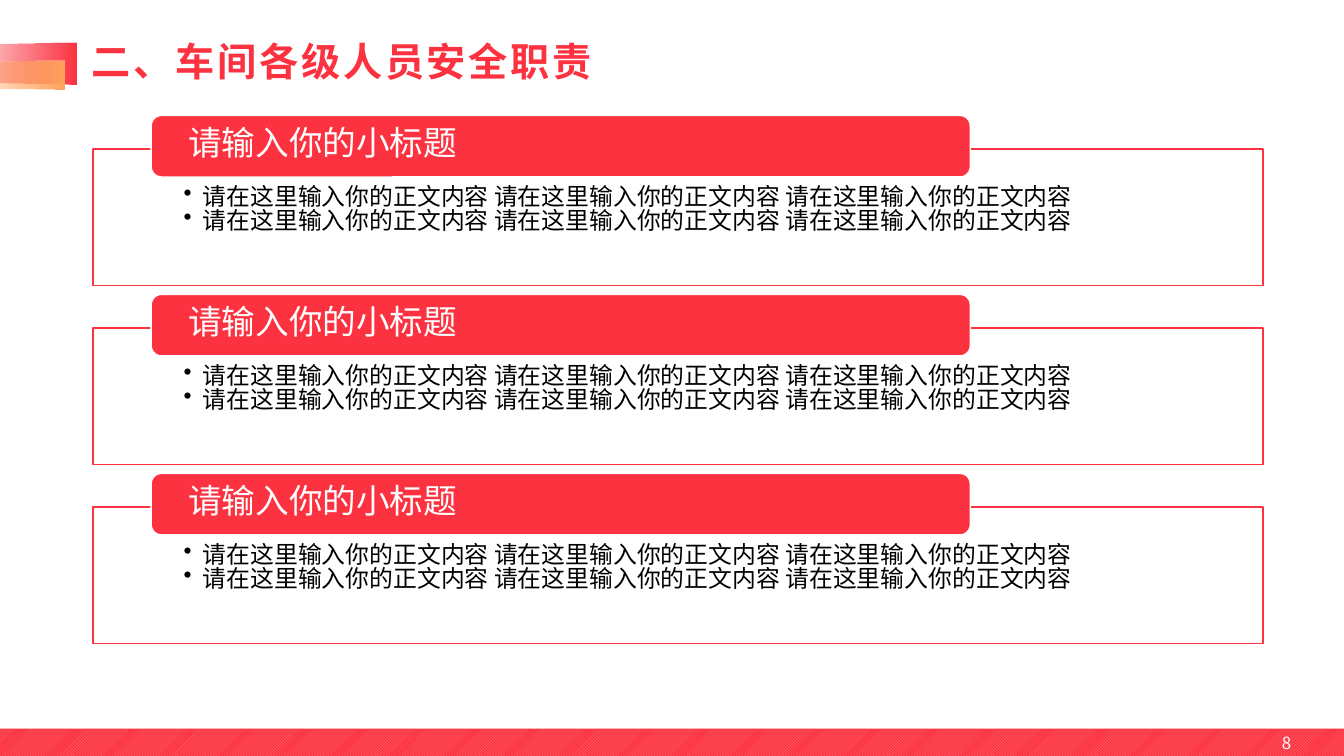
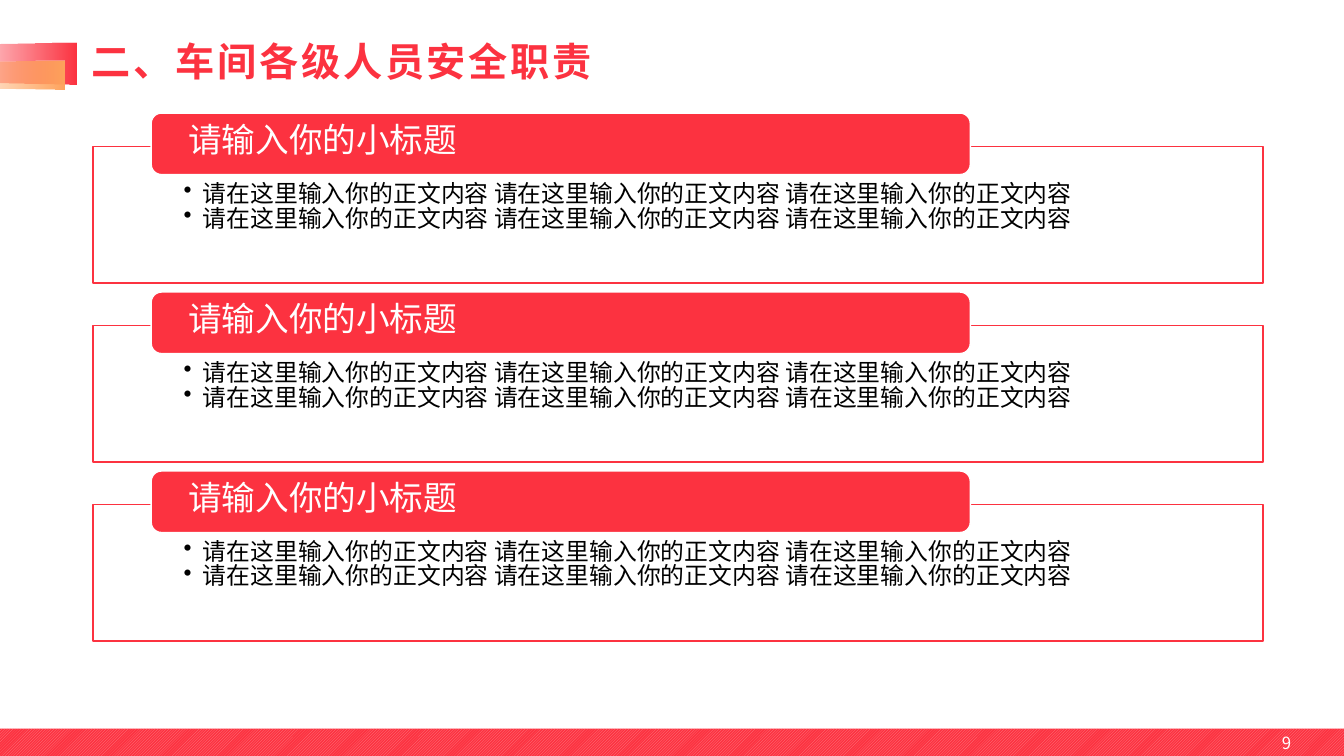
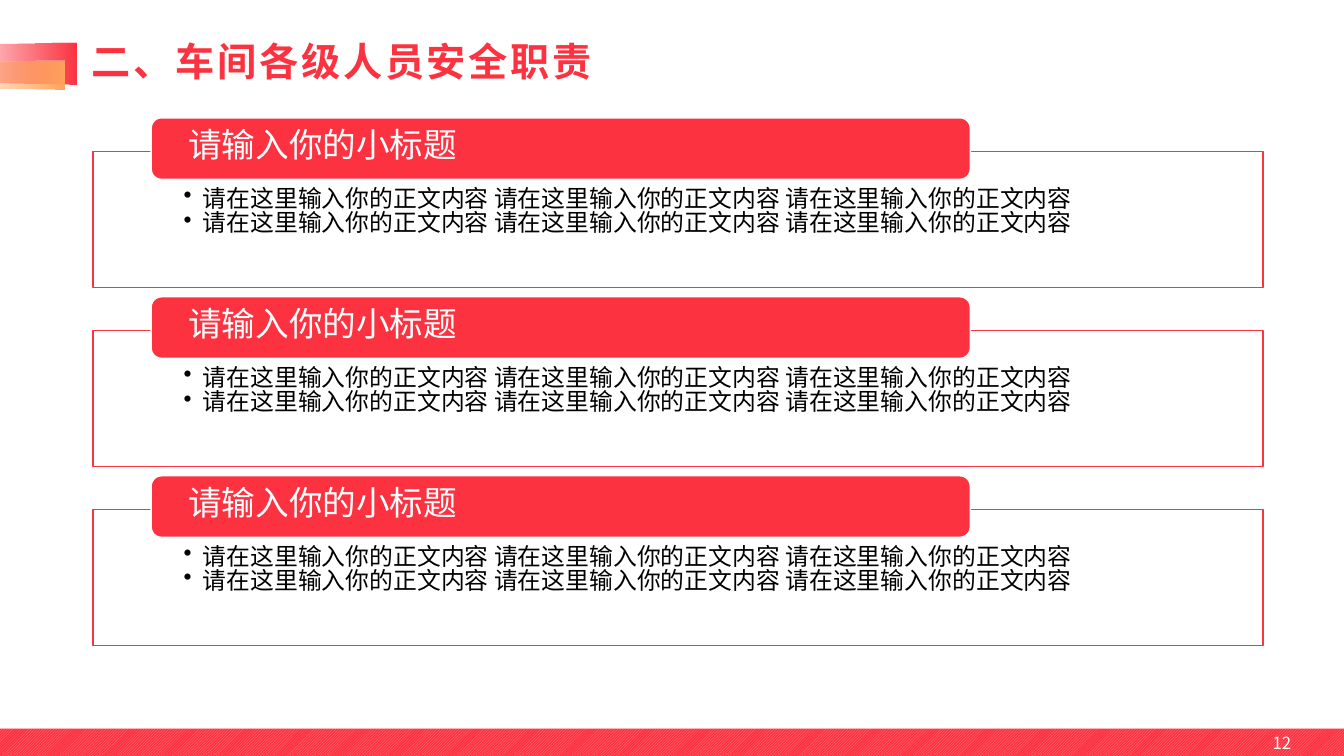
from dataclasses import dataclass

from lxml.etree import SubElement
from pptx import Presentation
from pptx.dml.color import RGBColor
from pptx.enum.dml import MSO_PATTERN
from pptx.enum.shapes import MSO_SHAPE
from pptx.enum.text import MSO_ANCHOR, PP_ALIGN
from pptx.oxml.ns import qn
from pptx.util import Cm, Pt


@dataclass(frozen=True)
class Theme:
    font: str = "Noto Sans CJK JP"
    red: RGBColor = RGBColor(0xFC, 0x32, 0x40)
    pink: RGBColor = RGBColor(0xFD, 0x84, 0x8C)
    orange: RGBColor = RGBColor(0xFF, 0xA4, 0x5D)
    white: RGBColor = RGBColor(0xFF, 0xFF, 0xFF)
    black: RGBColor = RGBColor(0, 0, 0)
    title: int = 28
    heading: int = 24
    body: int = 17
    number: int = 12


T = Theme()
WIDTH, HEIGHT = 33.87, 19.05
TITLE = "二、车间各级人员安全职责"
HEADING = "请输入你的小标题"
LINE = "请在这里输入你的正文内容 请在这里输入你的正文内容 请在这里输入你的正文内容"
SECTIONS = [(HEADING, [LINE, LINE])] * 3
# Page number and top of the first section in cm
PAGES = [(8, 2.91), (9, 2.85), (12, 2.97)]
SECTION_STEP = 4.51


def add_shape(s, kind, x, y, w, h, fill=None, line=None):
    sp = s.shapes.add_shape(kind, Cm(x), Cm(y), Cm(w), Cm(h))
    sp.shadow.inherit = False
    if fill is not None:
        sp.fill.solid()
        sp.fill.fore_color.rgb = fill
    if line is None:
        sp.line.fill.background()
    else:
        sp.line.color.rgb = line
        sp.line.width = Pt(1)
    return sp


def add_box(s, x, y, w, h):
    return s.shapes.add_textbox(Cm(x), Cm(y), Cm(w), Cm(h))


def set_insets(tf, left, top, right, bottom):
    tf.margin_left, tf.margin_top = Cm(left), Cm(top)
    tf.margin_right, tf.margin_bottom = Cm(right), Cm(bottom)


def write(tf, lines, size, color, align=PP_ALIGN.LEFT, anchor=MSO_ANCHOR.MIDDLE,
          spacing=0.9, bold=False, tracking=0, bullet_indent=0):
    """Fill a text frame; tracking is in points, bullet_indent in cm."""
    tf.word_wrap = True
    tf.vertical_anchor = anchor
    tf.text = "\n".join(lines)
    for p in tf.paragraphs:
        p.alignment = align
        p.line_spacing = spacing
        if bullet_indent:
            pPr = p._p.get_or_add_pPr()
            pPr.set("marL", str(Cm(bullet_indent)))
            pPr.set("indent", str(-Cm(bullet_indent)))
            SubElement(pPr, qn("a:buChar")).set("char", "•")
        for r in p.runs:
            r.font.size = Pt(size)
            r.font.bold = bold
            r.font.color.rgb = color
            r.font.name = T.font
            rPr = r.font._element
            SubElement(rPr, qn("a:ea")).set("typeface", T.font)
            if tracking:
                rPr.set("spc", str(tracking * 100))


def add_ribbon(s, x, y, w, h, color):
    """Trapezoid turned on its side, fading in from the left."""
    sp = add_shape(s, MSO_SHAPE.TRAPEZOID, x, y, w, h)
    sp.rotation = 270
    sp.adjustments[0] = 0.07
    sp.fill.gradient()
    sp.fill.gradient_angle = 270
    for stop in sp.fill.gradient_stops:
        stop.color.rgb = color
    first = sp._element.find(".//" + qn("a:gs")).find(qn("a:srgbClr"))
    SubElement(first, qn("a:alpha")).set("val", "0")


def add_header(s, title):
    add_ribbon(s, -0.3, -0.1, 1.04, 3.4, T.red)
    add_ribbon(s, -0.23, 0.41, 0.74, 2.95, T.orange)
    tf = add_box(s, 2.06, 0.95, 20.22, 1.32).text_frame
    write(tf, [title], T.title, T.red, bold=True, tracking=2)


def add_footer(s, number):
    band = add_shape(s, MSO_SHAPE.RECTANGLE, 0, 18.36, WIDTH, HEIGHT - 18.36)
    band.fill.patterned()
    band.fill.pattern = MSO_PATTERN.DARK_UPWARD_DIAGONAL
    band.fill.fore_color.rgb = T.pink
    band.fill.back_color.rgb = T.red
    tf = add_box(s, 25.17, 18.21, 7.62, 1.02).text_frame
    write(tf, [str(number)], T.number, T.white, PP_ALIGN.RIGHT, spacing=1.0)


def add_section(s, x, y, w, heading, lines):
    """Framed bullet list with a heading tab over its top edge."""
    frame = add_shape(s, MSO_SHAPE.RECTANGLE, x, y + 0.85, w, 3.43, T.white, T.red)
    set_insets(frame.text_frame, 2.29, 0.92, 2.29, 0.33)
    write(frame.text_frame, lines, T.body, T.black, anchor=MSO_ANCHOR.TOP,
          spacing=0.85, bullet_indent=0.48)
    tab = add_shape(s, MSO_SHAPE.ROUNDED_RECTANGLE, x + 1.47, y, 0.7 * w, 1.55,
                    T.red, T.white)
    set_insets(tab.text_frame, 0.86, 0, 0.86, 0.1)
    write(tab.text_frame, [heading], T.heading, T.white)


def add_duties_slide(prs, number, top):
    s = prs.slides.add_slide(prs.slide_layouts[6])
    add_header(s, TITLE)
    for i, (heading, lines) in enumerate(SECTIONS):
        add_section(s, 2.34, top + i * SECTION_STEP, 29.49, heading, lines)
    add_footer(s, number)


def main():
    prs = Presentation()
    prs.slide_width, prs.slide_height = Cm(WIDTH), Cm(HEIGHT)
    for number, top in PAGES:
        add_duties_slide(prs, number, top)
    prs.save("out.pptx")


if __name__ == "__main__":
    main()
